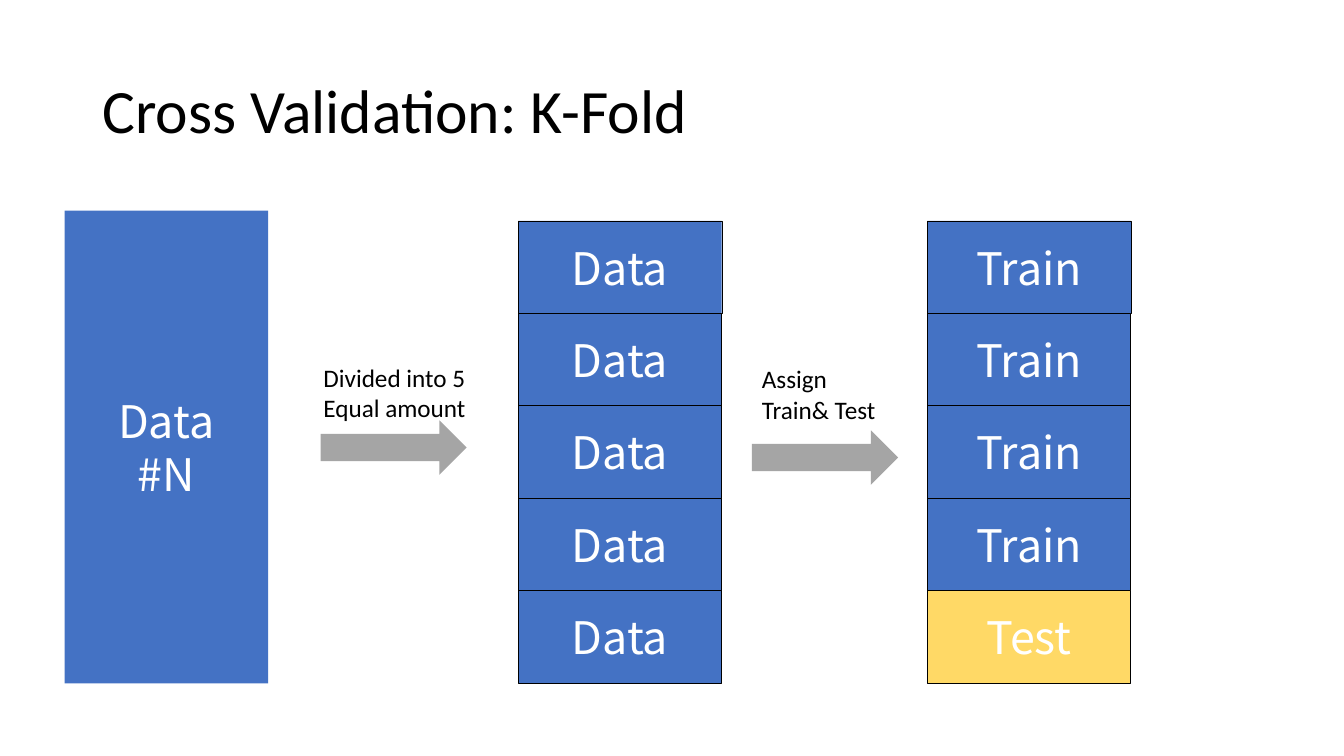
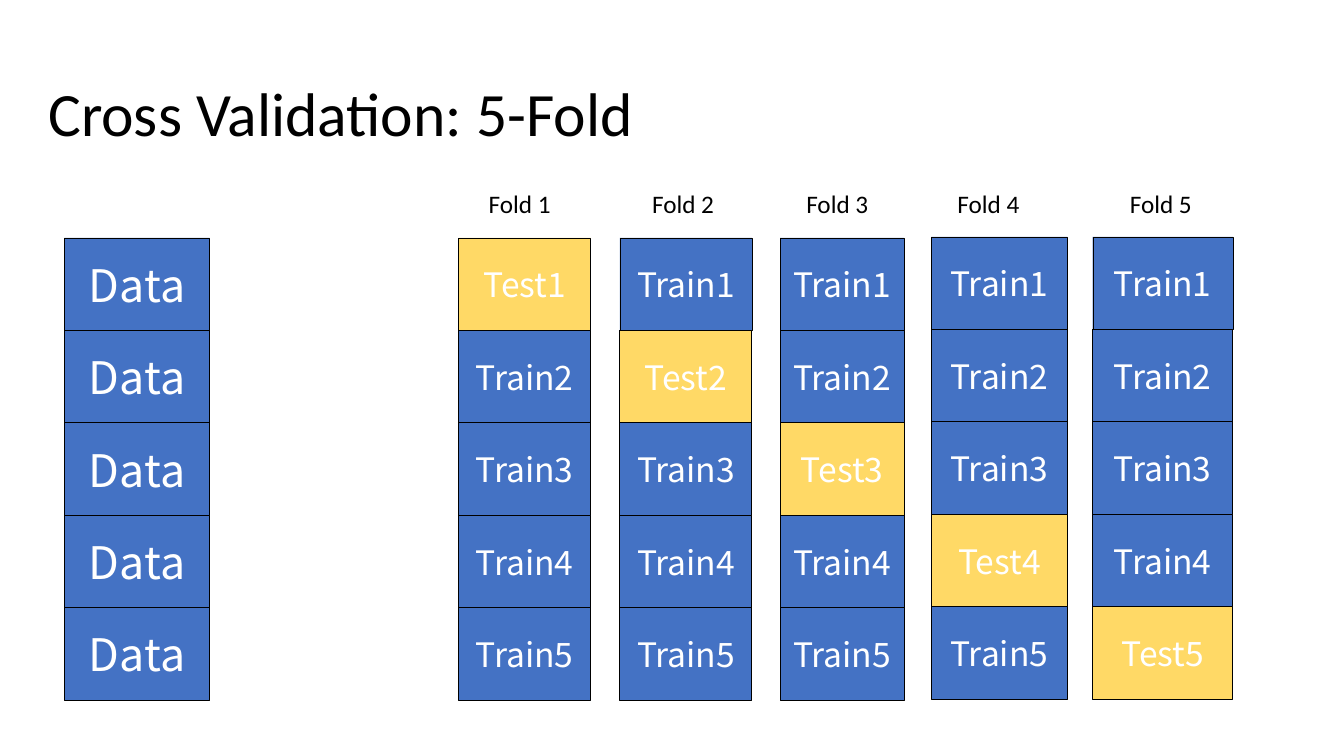
from dataclasses import dataclass

from pptx import Presentation
from pptx.dml.color import RGBColor
from pptx.enum.shapes import MSO_SHAPE as Preset
from pptx.enum.text import MSO_ANCHOR as Anchor, PP_ALIGN as Align
from pptx.util import Inches, Pt

# Lengths are counted in columns and rows of a square grid.
CELL = Inches(0.1)
SLIDE_COLUMNS, SLIDE_ROWS = 133.33, 75

BLUE, YELLOW, GREY = "4472C4", "FFD966", "A5A5A5"
BLACK, WHITE = "000000", "FFFFFF"
TEXT_FONT, BLOCK_FONT = "Calibri", "Noto Sans CJK TC"

FOLDS = 5
BLOCK_HEIGHT, BLOCK_PITCH = 9.2, 9.17


@dataclass(frozen=True)
class Area:
    left: float
    top: float
    width: float
    height: float

    def lengths(self) -> list[int]:
        return [round(n * CELL) for n in (self.left, self.top, self.width, self.height)]


@dataclass(frozen=True)
class Stack:
    left: float
    top: float
    width: float
    texts: list[str]
    size: int = 32


@dataclass(frozen=True)
class Step:
    arrow: Area
    label: Area
    text: str


@dataclass(frozen=True)
class Fold:
    left: float
    top: float
    width: float
    label_left: float


STEPS = [
    Step(Area(31.8, 41.7, 14.5, 5.4), Area(31.1, 35.4, 16.9, 7.1),
         "Divided into 5\nEqual amount"),
    Step(Area(74.6, 42.7, 14.5, 5.4), Area(74.6, 35.6, 13.4, 7.1),
         "Assign\nTrain& Test"),
]
FOLD_COLUMNS = [
    Fold(45.5, 23.6, 13.1, 47.5),
    Fold(61.5, 23.6, 13.1, 63.7),
    Fold(77.4, 23.6, 12.3, 79),
    Fold(92.4, 23.5, 13.5, 94),
    Fold(108.4, 23.5, 13.9, 111.1),
]


def rgb(value: str) -> RGBColor:
    return RGBColor.from_string(value)


def write(shape, text: str, *, size: float, font: str = TEXT_FONT,
          color: str = BLACK, align=Align.LEFT, anchor=Anchor.TOP,
          wrap: bool = True, spacing: float = 1.0) -> None:
    """Fill a shape with one paragraph for each line of text."""
    frame = shape.text_frame
    frame.word_wrap = wrap
    frame.vertical_anchor = anchor
    for index, line in enumerate(text.split("\n")):
        para = frame.add_paragraph() if index else frame.paragraphs[0]
        para.alignment = align
        para.line_spacing = spacing
        span = para.add_run()
        span.text = line
        span.font.name = font
        span.font.size = Pt(size)
        span.font.color.rgb = rgb(color)


def add_text(page, area: Area, text: str, **style) -> None:
    write(page.shapes.add_textbox(*area.lengths()), text, **style)


def add_preset(page, preset, area: Area, fill: str, line_width: float = 0):
    shape = page.shapes.add_shape(preset, *area.lengths())
    shape.shadow.inherit = False
    shape.fill.solid()
    shape.fill.fore_color.rgb = rgb(fill)
    if line_width:
        shape.line.color.rgb = rgb(BLACK)
        shape.line.width = Pt(line_width)
    else:
        shape.line.fill.background()
    return shape


def add_block(page, area: Area, text: str, size: int, line_width: float = 0) -> None:
    fill = YELLOW if text.startswith("Test") else BLUE
    box = add_preset(page, Preset.RECTANGLE, area, fill, line_width)
    write(box, text, size=size, font=BLOCK_FONT, color=WHITE,
          align=Align.CENTER, anchor=Anchor.MIDDLE)


def add_stack(page, stack: Stack) -> None:
    for row, text in enumerate(stack.texts):
        area = Area(stack.left, stack.top + row * BLOCK_PITCH, stack.width, BLOCK_HEIGHT)
        add_block(page, area, text, stack.size, line_width=0.75 if row else 0.25)


def add_page(deck, title: str, left: float, top: float):
    page = deck.slides.add_slide(deck.slide_layouts[6])
    add_text(page, Area(left, top, 115, 14.5), title,
             size=44, anchor=Anchor.MIDDLE, spacing=0.9)
    return page


def add_division_page(deck) -> None:
    page = add_page(deck, "Cross Validation: K-Fold", 9.2, 4)
    add_block(page, Area(6.4, 20.9, 20.2, 46.9), "Data\n#N", 32)
    add_stack(page, Stack(51.4, 21.9, 20.2, ["Data"] * FOLDS))
    add_stack(page, Stack(92, 21.9, 20.2, ["Train"] * (FOLDS - 1) + ["Test"]))
    for step in STEPS:
        add_preset(page, Preset.RIGHT_ARROW, step.arrow, GREY)
        add_text(page, step.label, step.text, size=18, wrap=False)


def add_folds_page(deck) -> None:
    page = add_page(deck, "Cross Validation: 5-Fold", 3.8, 4.3)
    add_stack(page, Stack(6.4, 23.6, 14.4, ["Data"] * FOLDS))
    for number, fold in enumerate(FOLD_COLUMNS, start=1):
        texts = [f"{'Test' if part == number else 'Train'}{part}"
                 for part in range(1, FOLDS + 1)]
        add_stack(page, Stack(fold.left, fold.top, fold.width, texts, size=24))
        add_text(page, Area(fold.label_left, 18.2, 8.8, 4), f"Fold {number}",
                 size=18, wrap=False)


def main() -> None:
    deck = Presentation()
    deck.slide_width = round(SLIDE_COLUMNS * CELL)
    deck.slide_height = SLIDE_ROWS * CELL
    add_division_page(deck)
    add_folds_page(deck)
    deck.save("out.pptx")


if __name__ == "__main__":
    main()
